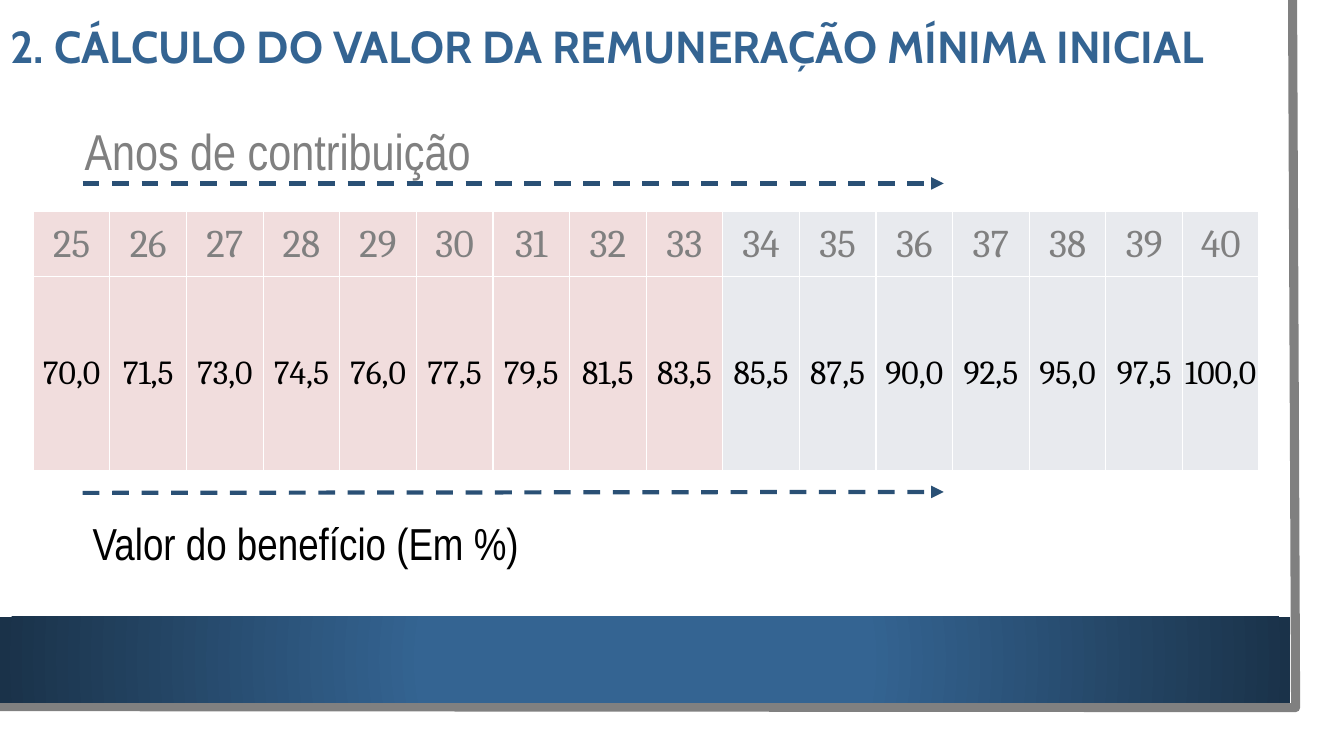
from lxml.etree import SubElement
from pptx import Presentation
from pptx.dml.color import RGBColor
from pptx.enum.dml import MSO_LINE
from pptx.enum.shapes import MSO_CONNECTOR, MSO_SHAPE
from pptx.enum.text import MSO_ANCHOR, MSO_AUTO_SIZE, PP_ALIGN
from pptx.oxml import parse_xml
from pptx.oxml.ns import nsdecls, qn
from pptx.util import Emu, Pt

WHITE = RGBColor(0xFF, 0xFF, 0xFF)
BLACK = RGBColor(0, 0, 0)
GRAY = RGBColor(0x80, 0x80, 0x80)
BLUE = RGBColor(0x34, 0x64, 0x92)
NAVY = RGBColor(0x1A, 0x32, 0x49)
ARROW_BLUE = RGBColor(0x2A, 0x50, 0x75)
PINK = RGBColor(0xF1, 0xDD, 0xDD)
PALE = RGBColor(0xE8, 0xEA, 0xEE)

YEARS = [str(year) for year in range(25, 41)]
BENEFITS = ("70,0 71,5 73,0 74,5 76,0 77,5 79,5 81,5 "
            "83,5 85,5 87,5 90,0 92,5 95,0 97,5 100,0").split()
PINK_COLUMNS = 9


def px(length):
    return Emu(length * 9144)


class SlideBuilder:
    title_font = "Cabin"
    label_font = "Arial Narrow"
    table_font = "Cambria"

    def __init__(self, presentation):
        self.slide = presentation.slides.add_slide(presentation.slide_layouts[5])
        self.shapes = self.slide.shapes

    def style(self, paragraph, font, size, color, bold=False):
        paragraph.font.name = font
        paragraph.font.size = Pt(size)
        paragraph.font.color.rgb = color
        paragraph.font.bold = bold

    def rectangle(self, left, top, width, height, color):
        panel = self.shapes.add_shape(
            MSO_SHAPE.RECTANGLE, px(left), px(top), px(width), px(height))
        panel.shadow.inherit = False
        panel.fill.solid()
        panel.fill.fore_color.rgb = color
        panel.line.fill.background()
        return panel

    def radial_band(self, left, top, width, height, center, edge):
        band = self.rectangle(left, top, width, height, center)
        solid = band._element.spPr.find(qn("a:solidFill"))
        gradient = parse_xml(
            f'<a:gradFill {nsdecls("a")} rotWithShape="1"><a:gsLst>'
            f'<a:gs pos="34000"><a:srgbClr val="{center}"/></a:gs>'
            f'<a:gs pos="100000"><a:srgbClr val="{edge}"/></a:gs></a:gsLst>'
            '<a:path path="circle"><a:fillToRect l="50000" t="50000" '
            'r="50000" b="50000"/></a:path></a:gradFill>')
        solid.getparent().replace(solid, gradient)

    def outline(self, points, color, weight):
        start, *rest = [(px(x), px(y)) for x, y in points]
        builder = self.shapes.build_freeform(*start)
        builder.add_line_segments(rest, close=False)
        edge = builder.convert_to_shape()
        edge.shadow.inherit = False
        edge.fill.background()
        edge.line.color.rgb = color
        edge.line.width = Pt(weight)

    def arrow(self, left, right, y_start, y_end):
        arrow = self.shapes.add_connector(
            MSO_CONNECTOR.STRAIGHT, px(left), px(y_start), px(right), px(y_end))
        arrow.line.color.rgb = ARROW_BLUE
        arrow.line.width = Pt(3)
        arrow.line.dash_style = MSO_LINE.DASH
        SubElement(arrow.line._ln, qn("a:tailEnd"), type="triangle")
        SubElement(arrow._element.spPr, qn("a:effectLst"))

    def label(self, text, left, top, width, height, size, color):
        frame = self.shapes.add_textbox(
            px(left), px(top), px(width), px(height)).text_frame
        frame.word_wrap = True
        frame.auto_size = MSO_AUTO_SIZE.SHAPE_TO_FIT_TEXT
        frame.text = text
        self.style(frame.paragraphs[0], self.label_font, size, color)

    def title(self, text, left, top, width, height):
        title = self.shapes.title
        title.left, title.top = px(left), px(top)
        title.width, title.height = px(width), px(height)
        frame = title.text_frame
        frame.text = text
        frame.word_wrap = True
        frame.auto_size = MSO_AUTO_SIZE.NONE
        frame.vertical_anchor = MSO_ANCHOR.BOTTOM
        heading = frame.paragraphs[0]
        heading.alignment = PP_ALIGN.LEFT
        heading.line_spacing = 0.9
        self.style(heading, self.title_font, 32, BLUE, bold=True)
        self.shapes._spTree.append(title._element)

    def cell(self, cell, text, size, color, fill):
        properties = cell._tc.get_or_add_tcPr()
        for side in ("lnL", "lnR", "lnT", "lnB"):
            properties.append(parse_xml(
                f'<a:{side} {nsdecls("a")} w="12700"><a:solidFill>'
                f'<a:srgbClr val="{WHITE}"/></a:solidFill></a:{side}>'))
        cell.fill.solid()
        cell.fill.fore_color.rgb = fill
        cell.margin_left = cell.margin_right = cell.margin_top = px(1)
        cell.margin_bottom = 0
        cell.vertical_anchor = MSO_ANCHOR.MIDDLE
        cell.text = text
        paragraph = cell.text_frame.paragraphs[0]
        paragraph.alignment = PP_ALIGN.CENTER
        self.style(paragraph, self.table_font, size, color)

    def table(self, left, top, column_width, rows):
        columns = len(rows[0][0])
        table = self.shapes.add_table(
            len(rows), columns, px(left), px(top), px(column_width * columns),
            px(sum(height for _, height, _, _ in rows))).table
        table.first_row = False
        table.horz_banding = False
        for column in table.columns:
            column.width = px(column_width)
        for r, (values, height, size, color) in enumerate(rows):
            table.rows[r].height = px(height)
            for c, value in enumerate(values):
                fill = PINK if c < PINK_COLUMNS else PALE
                self.cell(table.cell(r, c), value, size, color, fill)


def main():
    presentation = Presentation()
    presentation.slide_width = px(1333)
    presentation.slide_height = px(750)
    page = SlideBuilder(presentation)
    page.rectangle(0, 0, 1310, 727, WHITE)
    page.outline([(1282, 0), (1285, 702), (-3, 701)], GRAY, 6.5)
    page.radial_band(0, 612, 1280, 85, BLUE, NAVY)
    page.table(33, 210, 76, [(YEARS, 64, 28, GRAY), (BENEFITS, 193, 24, BLACK)])
    page.arrow(82, 936, 182, 182)
    page.arrow(82, 936, 489, 488)
    page.label("Anos de contribuição", 74, 114, 1061, 71, 36, GRAY)
    page.label("Valor do benefício (Em %)", 82, 507, 1061, 64, 32, BLACK)
    page.title("2. CÁLCULO DO VALOR DA REMUNERAÇÃO MÍNIMA INICIAL", 0, 5, 1250, 73)
    presentation.save("out.pptx")


if __name__ == "__main__":
    main()
